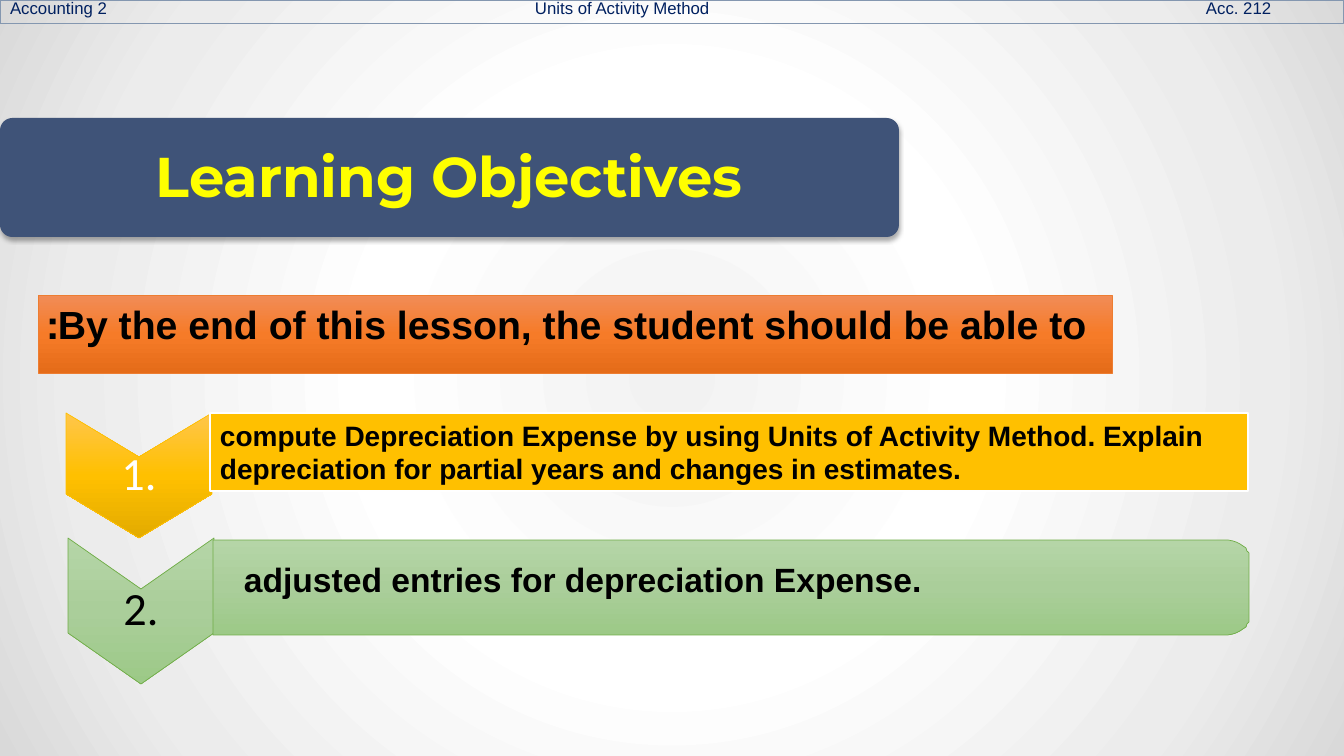
import math

import lxml.etree
import pptx
import pptx.dml.color
import pptx.enum.shapes
import pptx.enum.text
import pptx.oxml.ns
import pptx.util

PX = 914400 / 100.8
COLORS = {
    "black": "000000", "white": "FFFFFF", "navy": "002060", "yellow": "FFFF00",
    "title": "3F5378", "header_line": "8497B0", "orange_line": "ED7D31",
    "gold": "FFC000", "green_line": "70AD47",
}
GRADIENTS = {
    "background": [(0, "F2F2F2"), (39, "FFFFFF"), (78, "ECECEC"), (100, "D9D9D9")],
    "orange": [(0, "F18C57"), (50, "F67B28"), (100, "E56C19")],
    "gold": [(0, "FFC64B"), (50, "FFC000"), (100, "E3AB00")],
    "green": [(0, "B5D5A7"), (50, "AACE9A"), (100, "9CC987")],
}
SHAPES = pptx.enum.shapes.MSO_SHAPE
ALIGN = pptx.enum.text.PP_ALIGN
ANCHOR = pptx.enum.text.MSO_ANCHOR


def emu(pixels):
    return pptx.util.Emu(round(pixels * PX))


def rgb(name):
    return pptx.dml.color.RGBColor.from_string(COLORS[name])


def add_child(parent, tag, **attributes):
    child = lxml.etree.SubElement(parent, pptx.oxml.ns.qn(tag))
    for name, value in attributes.items():
        child.set(name, str(value))
    return child


def set_gradient(fill, owner, name, circular=False):
    fill.gradient()
    gradient = owner.xpath(".//a:gradFill")[0]
    for child in list(gradient):
        gradient.remove(child)
    stops = add_child(gradient, "a:gsLst")
    for position, color in GRADIENTS[name]:
        stop = add_child(stops, "a:gs", pos=position * 1000)
        add_child(stop, "a:srgbClr", val=color)
    if circular:
        center = add_child(gradient, "a:path", path="circle")
        add_child(center, "a:fillToRect", l=50000, t=50000, r=50000, b=50000)
    else:
        add_child(gradient, "a:lin", ang=5400000, scaled=0)


def style_shape(shape, fill=None, gradient=None, line=None, line_width=0.5):
    shape.shadow.inherit = False
    if gradient:
        set_gradient(shape.fill, shape.element, gradient)
    elif fill:
        shape.fill.solid()
        shape.fill.fore_color.rgb = rgb(fill)
    else:
        shape.fill.background()
    if line:
        shape.line.color.rgb = rgb(line)
        shape.line.width = pptx.util.Pt(line_width)
    else:
        shape.line.fill.background()
    return shape


def add_box(slide, kind, left, top, width, height, **style):
    shape = slide.shapes.add_shape(kind, emu(left), emu(top), emu(width), emu(height))
    return style_shape(shape, **style)


def add_outline(slide, points, **style):
    builder = slide.shapes.build_freeform(*points[0], scale=PX)
    builder.add_line_segments(points[1:], close=True)
    return style_shape(builder.convert_to_shape(), **style)


def add_chevron(slide, left, top, width, height, notch, **style):
    right, middle, bottom = left + width, left + width / 2, top + height
    points = [(right, top), (right, bottom - notch), (middle, bottom),
              (left, bottom - notch), (left, top), (middle, top + notch)]
    return add_outline(slide, points, **style)


def add_rounded_bar(slide, left, top, width, height, radius_x, radius_y, **style):
    right, bottom = left + width, top + height
    angles = [math.radians(degrees) for degrees in range(0, 91, 10)]
    upper = [(right - radius_x + radius_x * math.sin(angle),
              top + radius_y - radius_y * math.cos(angle)) for angle in angles]
    lower = [(x, top + bottom - y) for x, y in reversed(upper)]
    return add_outline(slide, [(left, top), *upper, *lower, (left, bottom)], **style)


def add_textbox(slide, left, top, width, height):
    return slide.shapes.add_textbox(emu(left), emu(top), emu(width), emu(height))


def write_text(shape, text, size, color="black", font="Arial", bold=False,
               align=ALIGN.LEFT, anchor=ANCHOR.TOP, wrap=True, insets=(10, 5),
               spacing=None, before=None, right_to_left=False, tabs=()):
    frame = shape.text_frame
    frame.word_wrap = wrap
    frame.vertical_anchor = anchor
    frame.margin_left = frame.margin_right = emu(insets[0])
    frame.margin_top = frame.margin_bottom = emu(insets[1])
    paragraph = frame.paragraphs[0]
    paragraph.alignment = align
    if spacing:
        paragraph.line_spacing = spacing
    if before:
        paragraph.space_before = pptx.util.Pt(before)
    run = paragraph.add_run()
    run.text = text
    run.font.size = pptx.util.Pt(size)
    run.font.name = font
    run.font.bold = bold
    run.font.color.rgb = rgb(color)
    properties = shape.element.xpath(".//a:pPr")[0]
    if right_to_left:
        properties.set("rtl", "1")
    if tabs:
        stops = add_child(properties, "a:tabLst")
        for position in tabs:
            add_child(stops, "a:tab", pos=emu(position), algn="l")


def add_shadow(shape):
    effects = shape.element.xpath(".//a:effectLst")[0]
    shadow = add_child(effects, "a:outerShdw", blurRad=pptx.util.Pt(3.5),
                       dist=pptx.util.Pt(2.2), dir=5400000, rotWithShape=0)
    color = add_child(shadow, "a:srgbClr", val=COLORS["black"])
    add_child(color, "a:alpha", val=32000)


def add_header(slide):
    header = add_box(slide, SHAPES.RECTANGLE, 0, 0, 1344, 24,
                     line="header_line", line_width=0.75)
    write_text(header, "Accounting 2\tUnits of Activity Method\tAcc. 212", 12,
               color="navy", insets=(10, 0), spacing=0.9, tabs=(525, 1196))


def add_title(slide):
    plate = add_box(slide, SHAPES.ROUNDED_RECTANGLE, 0, 118, 899, 119, fill="title")
    plate.adjustments[0] = 0.104
    add_shadow(plate)
    title = add_textbox(slide, 129, 137, 640, 78)
    write_text(title, "Learning Objectives", 40, color="yellow", font="Montserrat",
               bold=True, align=ALIGN.CENTER, wrap=False)


def add_objectives(slide):
    number_format = {"size": 33, "font": "Calibri", "align": ALIGN.CENTER,
                     "anchor": ANCHOR.MIDDLE, "insets": (2, 0), "spacing": 0.9}
    first = add_chevron(slide, 66, 413, 146, 125, 44, gradient="gold", line="gold")
    write_text(first, "1.", color="white", **number_format)
    second = add_chevron(slide, 68, 538, 146, 146, 51,
                         gradient="green", line="green_line")
    write_text(second, "2.", **number_format)
    add_rounded_bar(slide, 213, 540, 1036, 95, 25, 16,
                    gradient="green", line="green_line")
    compute = add_box(slide, SHAPES.RECTANGLE, 210, 413, 1038, 78,
                      fill="gold", line="white", line_width=1.5)
    write_text(compute, "compute Depreciation Expense by using Units of Activity Method. "
               "Explain depreciation for partial years and changes in estimates.",
               20, bold=True)
    entries = add_textbox(slide, 234, 554, 877, 50)
    write_text(entries, "adjusted entries for depreciation Expense.", 24, bold=True)


def main():
    presentation = pptx.Presentation()
    presentation.slide_width = emu(1344)
    presentation.slide_height = emu(756)
    slide = presentation.slides.add_slide(presentation.slide_layouts[6])
    set_gradient(slide.background.fill, slide.element, "background", circular=True)
    intro = add_box(slide, SHAPES.RECTANGLE, 38, 295, 1074, 78,
                    gradient="orange", line="orange_line")
    write_text(intro, "By the end of this lesson, the student should be able to:", 28,
               bold=True, before=6, right_to_left=True)
    add_objectives(slide)
    add_title(slide)
    add_header(slide)
    presentation.save("out.pptx")


if __name__ == "__main__":
    main()
